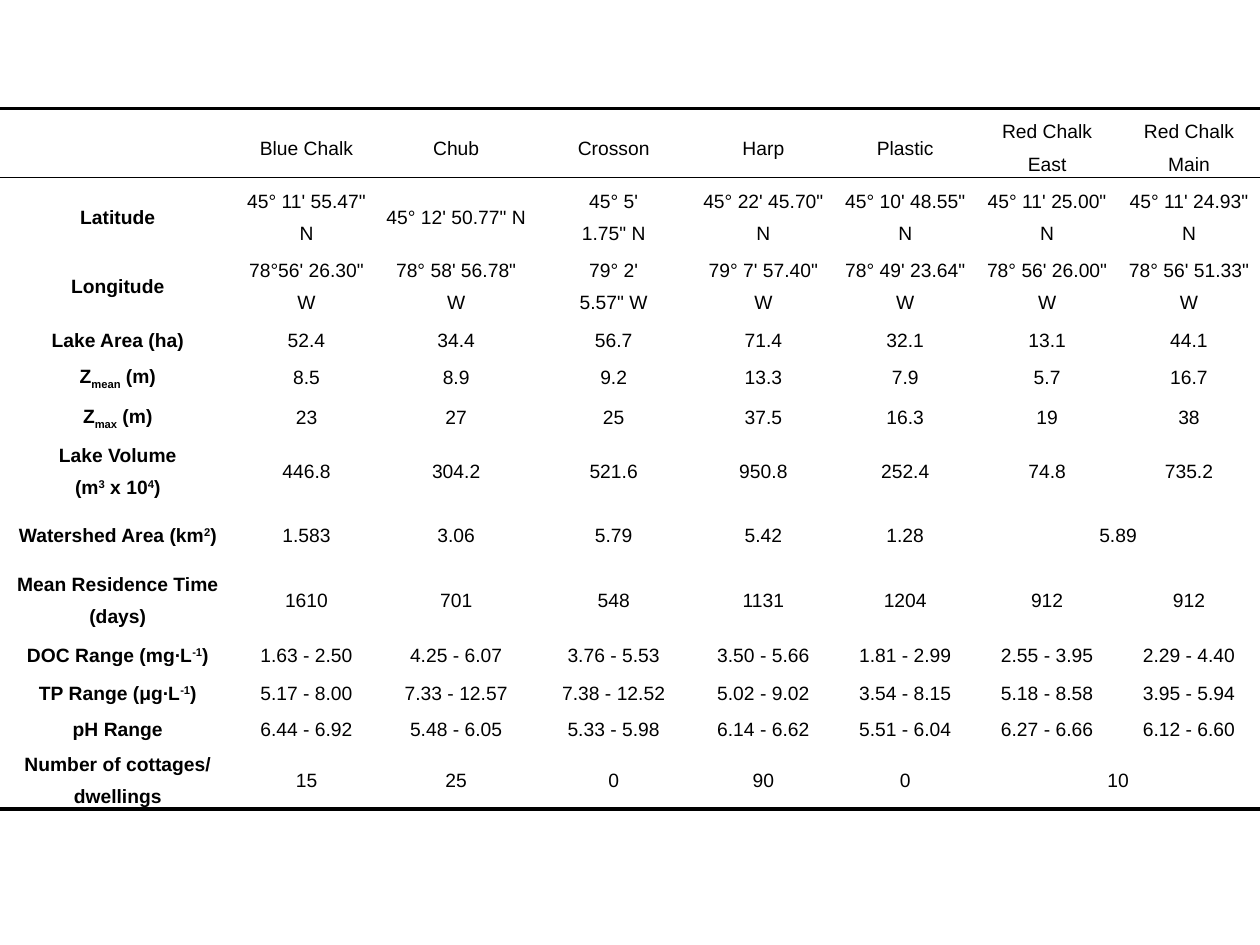
from lxml import etree
from pptx import Presentation, util as u
from pptx.dml.color import RGBColor
from pptx.enum import text
from pptx.oxml.ns import qn

BLACK = RGBColor(0, 0, 0)
FONT, SIZE = "Arial", u.Pt(11)
NO_STYLE = "{2D5ABB26-0587-4C30-8999-92F81FD0307C}"
THICK, THIN = u.Pt(2.25), u.Pt(1)

# Content: "|^...|" is superscript, "|_...|" is subscript, a newline starts a
# paragraph, and None extends the cell on its left.
LAKES = ["", "Blue Chalk", "Chub", "Crosson", "Harp", "Plastic",
         "Red Chalk East", "Red Chalk Main"]
MEASURES = [
    ["Latitude", "45° 11' 55.47\" N", "45° 12' 50.77\" N", "45° 5'\n1.75\" N",
     "45° 22' 45.70\" N", "45° 10' 48.55\" N", "45° 11' 25.00\" N", "45° 11' 24.93\" N"],
    ["Longitude", "78°56' 26.30\" W", "78° 58' 56.78\" W", "79° 2'\n5.57\" W",
     "79° 7' 57.40\" W", "78° 49' 23.64\" W", "78° 56' 26.00\" W", "78° 56' 51.33\" W"],
    ["Lake Area (ha)", "52.4", "34.4", "56.7", "71.4", "32.1", "13.1", "44.1"],
    ["Z|_mean| (m)", "8.5", "8.9", "9.2", "13.3", "7.9", "5.7", "16.7"],
    ["Z|_max| (m)", "23", "27", "25", "37.5", "16.3", "19", "38"],
    ["Lake Volume\n(m|^3| x 10|^4|)", "446.8", "304.2", "521.6", "950.8", "252.4",
     "74.8", "735.2"],
    ["Watershed Area (km|^2|)", "1.583", "3.06", "5.79", "5.42", "1.28", "5.89", None],
    ["Mean Residence Time (days)", "1610", "701", "548", "1131", "1204", "912", "912"],
    ["DOC Range (mg∙L|^-1|)", "1.63 - 2.50", "4.25 - 6.07", "3.76 - 5.53",
     "3.50 - 5.66", "1.81 - 2.99", "2.55 - 3.95", "2.29 - 4.40"],
    ["TP Range (μg∙L|^-1|)", "5.17 - 8.00", "7.33 - 12.57", "7.38 - 12.52",
     "5.02 - 9.02", "3.54 - 8.15", "5.18 - 8.58", "3.95 - 5.94"],
    ["pH Range", "6.44 - 6.92", "5.48 - 6.05", "5.33 - 5.98", "6.14 - 6.62",
     "5.51 - 6.04", "6.27 - 6.66", "6.12 - 6.60"],
    ["Number of cottages/ dwellings", "15", "25", "0", "90", "0", "10", None],
]
ROWS = [LAKES] + MEASURES

# Grid in inches: the narrow columns share what the wide ones leave
WIDE = {0: 1.87, 2: 1.25, 3: 1.25}
NARROW = (10 - sum(WIDE.values())) / (len(LAKES) - len(WIDE))
ROW_HEIGHTS = [0.55] * 3 + [0.3, 0.29, 0.34, 0.52, 0.5, 0.53, 0.34, 0.27, 0.29, 0.53]
BASELINES = {"^": "30000", "_": "-25000"}

# Ruled sides by row; every other side has no line
SIDES = ["a:lnL", "a:lnR", "a:lnT", "a:lnB"]
RULES = {0: {"a:lnT": THICK, "a:lnB": THIN},
         1: {"a:lnT": THIN},
         len(ROWS) - 1: {"a:lnB": THICK}}


def add_border(cell, side, width):
    properties = cell._tc.get_or_add_tcPr()
    if width is None:
        etree.SubElement(etree.SubElement(properties, qn(side)), qn("a:noFill"))
        return
    line = etree.SubElement(properties, qn(side), w=str(int(width)))
    fill = etree.SubElement(line, qn("a:solidFill"))
    etree.SubElement(fill, qn("a:srgbClr"), val=str(BLACK))
    etree.SubElement(line, qn("a:prstDash"), val="solid")


def write(cell, content, bold):
    frame = cell.text_frame
    for index, line in enumerate(content.split("\n")):
        paragraph = frame.add_paragraph() if index else frame.paragraphs[0]
        paragraph.alignment = text.PP_ALIGN.CENTER
        paragraph.line_spacing = 1.5
        for position, part in enumerate(line.split("|")):
            shifted = position % 2 == 1
            run = paragraph.add_run()
            run.text = part[1:] if shifted else part
            run.font.name, run.font.size, run.font.bold = FONT, SIZE, bold
            run.font.color.rgb = BLACK
            if shifted:
                run._r.get_or_add_rPr().set("baseline", BASELINES[part[0]])


def format_cell(cell, row):
    for side in SIDES:
        add_border(cell, side, RULES.get(row, {}).get(side))
    cell.fill.background()
    cell.vertical_anchor = text.MSO_ANCHOR.MIDDLE
    cell.margin_left = cell.margin_right = u.Inches(0.06)
    cell.margin_top = cell.margin_bottom = 0


def main():
    presentation = Presentation()
    presentation.slide_width, presentation.slide_height = u.Inches(10), u.Inches(7.5)
    slide = presentation.slides.add_slide(presentation.slide_layouts[6])

    # Lake table across the full slide width
    table = slide.shapes.add_table(
        len(ROWS), len(LAKES), 0, u.Inches(0.86),
        presentation.slide_width, u.Inches(sum(ROW_HEIGHTS))).table
    table.first_row = table.horz_banding = False
    table._tbl.tblPr.find(qn("a:tableStyleId")).text = NO_STYLE
    for index, column in enumerate(table.columns):
        column.width = u.Inches(WIDE.get(index, NARROW))
    for row, height in zip(table.rows, ROW_HEIGHTS):
        row.height = u.Inches(height)

    # Cells
    for row, contents in enumerate(ROWS):
        for column, content in enumerate(contents):
            cell = table.cell(row, column)
            format_cell(cell, row)
            if content is None:
                table.cell(row, column - 1).merge(cell)
            elif content:
                write(cell, content, bold=column == 0)

    presentation.save("out.pptx")


if __name__ == "__main__":
    main()
